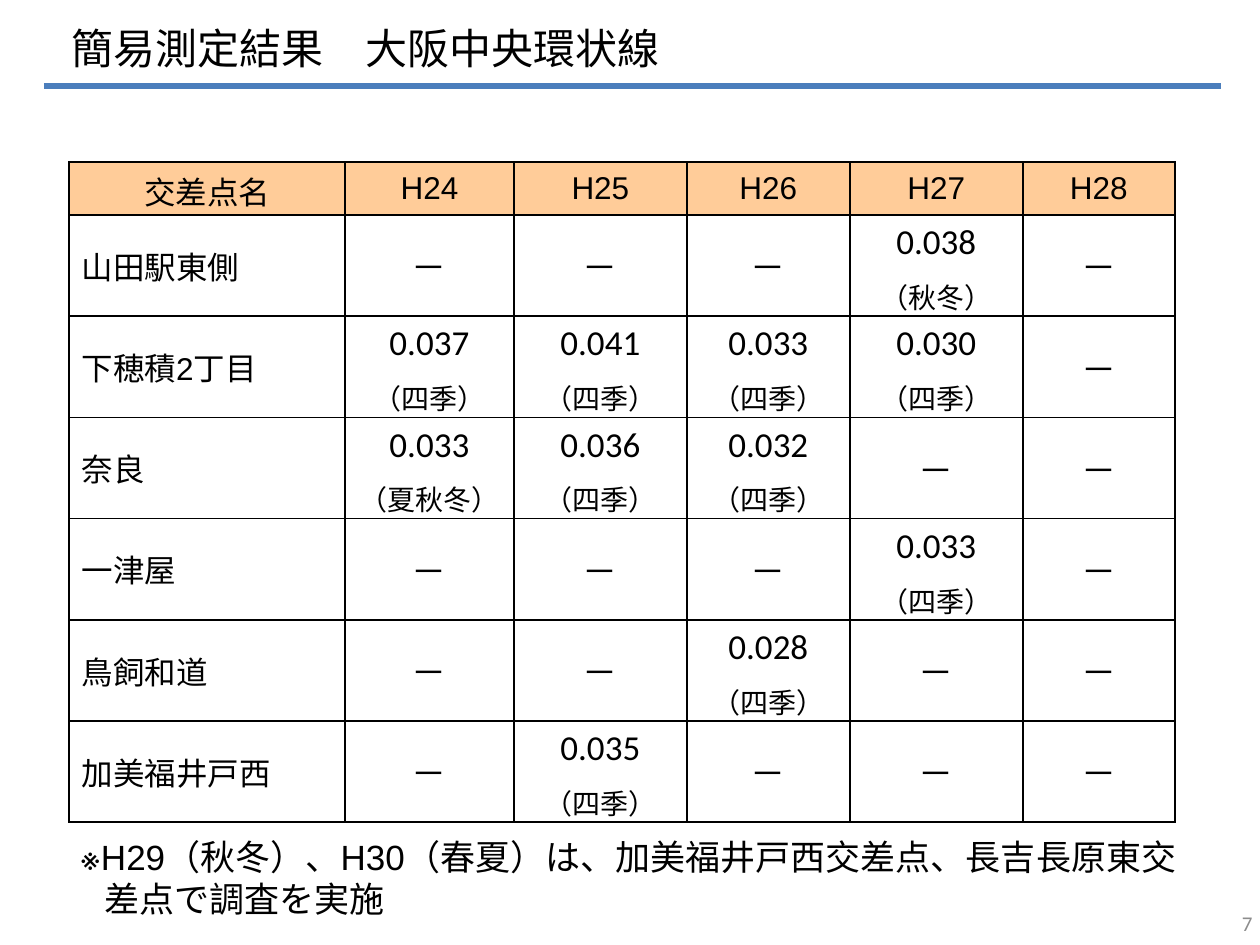
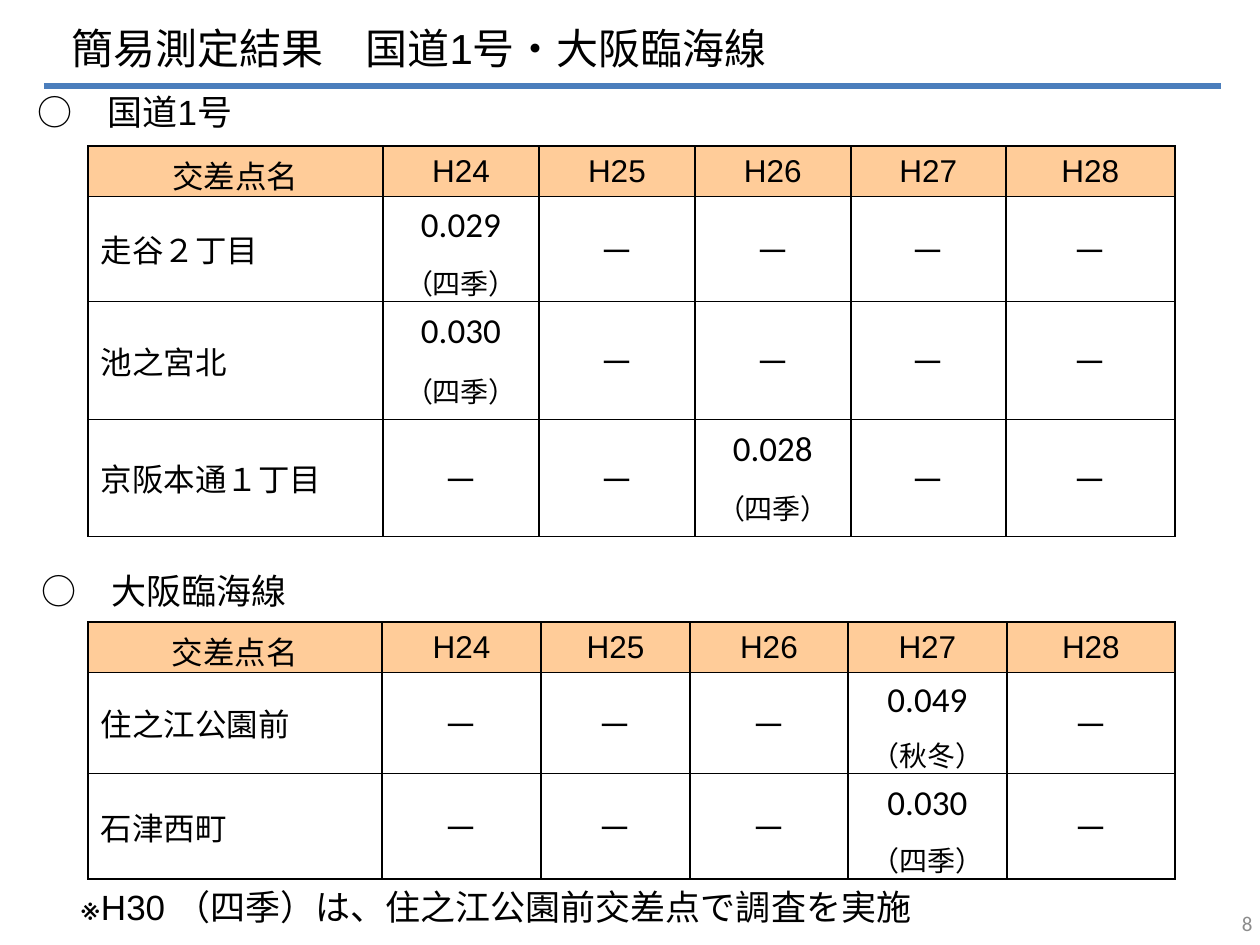
"""Build two slides of simplified measurement results by road."""
import itertools

import pptx
import pptx.dml.color
import pptx.enum.shapes
import pptx.enum.text
import pptx.oxml
import pptx.oxml.ns
import pptx.util

RGB = pptx.dml.color.RGBColor
BLACK = RGB(0x00, 0x00, 0x00)
WHITE = RGB(0xFF, 0xFF, 0xFF)
RULE_BLUE = RGB(0x4B, 0x7E, 0xBC)
HEADER_ORANGE = RGB(0xFF, 0xCC, 0x99)
NUMBER_GREY = RGB(0x8C, 0x8C, 0x8C)

ALIGN = pptx.enum.text.PP_ALIGN
ANCHOR = pptx.enum.text.MSO_ANCHOR
HEADING_FONT, TABLE_FONT = "Arial", "Calibri"
YEARS = ["H24", "H25", "H26", "H27", "H28"]
EMU_PER_INCH, PX_PER_INCH = 914400, 126


def px(length):
    """Turn pixels into EMU."""
    return pptx.util.Emu(round(length * EMU_PER_INCH / PX_PER_INCH))


def style(paragraph, size, font, color=BLACK, align=ALIGN.LEFT):
    """Set alignment and font of a whole paragraph."""
    paragraph.alignment = align
    paragraph.font.size = pptx.util.Pt(size)
    paragraph.font.name = font
    paragraph.font.color.rgb = color


def add_title(slide, text):
    """Place the slide title in its placeholder."""
    title = slide.shapes.title
    title.left, title.top, title.width, title.height = map(px, (59, 16, 1137, 63))
    frame = title.text_frame
    frame.text = text
    frame.vertical_anchor = ANCHOR.TOP
    frame.auto_size = pptx.enum.text.MSO_AUTO_SIZE.NONE
    style(frame.paragraphs[0], 24, HEADING_FONT)


def add_rule(slide):
    """Draw the line under the title."""
    rule = slide.shapes.add_connector(
        pptx.enum.shapes.MSO_CONNECTOR.STRAIGHT, px(44), px(86), px(1221), px(86))
    rule.line.color.rgb = RULE_BLUE
    rule.line.width = pptx.util.Pt(3)
    properties = rule._element.spPr
    properties.append(pptx.oxml.parse_xml(
        f"<a:effectLst {pptx.oxml.ns.nsdecls('a')}/>"))


def add_text(slide, box, text, size=20, font=HEADING_FONT, color=BLACK,
             align=ALIGN.LEFT, anchor=ANCHOR.TOP, hanging=0):
    """Add a one-paragraph text box, optionally with a hanging indent."""
    frame = slide.shapes.add_textbox(*map(px, box)).text_frame
    frame.word_wrap = True
    frame.vertical_anchor = anchor
    paragraph = frame.paragraphs[0]
    paragraph.text = text
    style(paragraph, size, font, color, align)
    if hanging:
        properties = paragraph._p.get_or_add_pPr()
        properties.set("marL", str(px(hanging)))
        properties.set("indent", str(-px(hanging)))


def add_note(slide, top, height, text):
    """Add the remark below the last table."""
    add_text(slide, (68, top, 1126, height), text, hanging=24)


def set_borders(cell, sides):
    """Draw the given sides (of L, R, T, B) and hide the others."""
    properties = cell._tc.get_or_add_tcPr()
    for position, side in enumerate("LRTB"):
        paint = (f'<a:solidFill><a:srgbClr val="{BLACK}"/></a:solidFill>'
                 if side in sides else "<a:noFill/>")
        properties.insert(position, pptx.oxml.parse_xml(
            f'<a:ln{side} {pptx.oxml.ns.nsdecls("a")} w="12700">{paint}</a:ln{side}>'))


def fill_cell(cell, text, size, font=TABLE_FONT, align=ALIGN.CENTER):
    """Write a cell, setting ASCII parts of mixed labels in the heading font."""
    cell.vertical_anchor = ANCHOR.MIDDLE
    paragraph = cell.text_frame.paragraphs[0]
    parts = ["".join(part) for _, part in itertools.groupby(text, str.isascii)]
    for part in parts:
        run = paragraph.add_run()
        run.text = part
        if len(parts) > 1 and part.isascii():
            run.font.name = HEADING_FONT
    style(paragraph, size, font, align=align)


def add_results(slide, left, top, widths, header_height, rows):
    """Add a table with a value row and a season row for each crossing."""
    heights = [header_height] + [h for _, pair, _ in rows for h in pair]
    table = slide.shapes.add_table(
        len(heights), len(widths), px(left), px(top),
        px(sum(widths)), px(sum(heights))).table
    table.first_row = table.horz_banding = False
    for column, width in zip(table.columns, widths):
        column.width = px(width)
    for row, height in zip(table.rows, heights):
        row.height = px(height)

    for column, heading in enumerate(["交差点名"] + YEARS):
        cell = table.cell(0, column)
        cell.fill.solid()
        cell.fill.fore_color.rgb = HEADER_ORANGE
        set_borders(cell, "LRTB")
        fill_cell(cell, heading, 18, HEADING_FONT if column else TABLE_FONT)

    for index, (crossing, _, results) in enumerate(rows):
        for column, year in enumerate([None] + YEARS):
            upper = table.cell(2 * index + 1, column)
            lower = table.cell(2 * index + 2, column)
            measured = year in results
            set_borders(upper, "LRT" if measured else "LRTB")
            set_borders(lower, "LRB")
            upper.fill.background()
            lower.fill.background()
            if measured:
                value, season = results[year]
                fill_cell(upper, value, 20)
                fill_cell(lower, f"（{season}）", 16)
                continue
            upper.merge(lower)
            if year:
                fill_cell(upper, "－", 20)
            else:
                fill_cell(upper, crossing, 18, align=ALIGN.LEFT)


def add_slide(deck, title, number):
    """Add a slide with title, rule and page number."""
    slide = deck.slides.add_slide(deck.slide_layouts[5])
    slide.background.fill.solid()
    slide.background.fill.fore_color.rgb = WHITE
    add_rule(slide)
    add_text(slide, (1194, 898, 71, 50), number, 12, TABLE_FONT, NUMBER_GREY,
             ALIGN.RIGHT, ANCHOR.MIDDLE)
    add_title(slide, title)
    return slide


def build_chuo_kanjo(deck):
    """Build the slide on the central ring road."""
    slide = add_slide(deck, "簡易測定結果　大阪中央環状線", "7")
    pair = (55, 46)
    add_results(slide, 69, 162, [276, 169, 173, 163, 173, 152], 53, [
        ("山田駅東側", pair, {"H27": ("0.038", "秋冬")}),
        ("下穂積2丁目", pair, {"H24": ("0.037", "四季"), "H25": ("0.041", "四季"),
                          "H26": ("0.033", "四季"), "H27": ("0.030", "四季")}),
        ("奈良", pair, {"H24": ("0.033", "夏秋冬"), "H25": ("0.036", "四季"),
                      "H26": ("0.032", "四季")}),
        ("一津屋", pair, {"H27": ("0.033", "四季")}),
        ("鳥飼和道", pair, {"H26": ("0.028", "四季")}),
        ("加美福井戸西", pair, {"H25": ("0.035", "四季")}),
    ])
    add_note(slide, 829, 97, "※H29（秋冬）、H30（春夏）は、加美福井戸西交差点、"
                             "長吉長原東交差点で調査を実施")


def build_route1_rinkai(deck):
    """Build the slide on Route 1 and the bay road."""
    slide = add_slide(deck, "簡易測定結果　国道1号・大阪臨海線", "8")
    add_text(slide, (25, 84, 265, 55), "○　国道1号")
    add_results(slide, 88, 146, [295, 156, 156, 156, 155, 169], 50, [
        ("走谷２丁目", (59, 46), {"H24": ("0.029", "四季")}),
        ("池之宮北", (59, 59), {"H24": ("0.030", "四季")}),
        ("京阪本通１丁目", (59, 58), {"H26": ("0.028", "四季")}),
    ])
    add_text(slide, (29, 563, 552, 55), "○　大阪臨海線")
    add_results(slide, 88, 622, [294, 159, 149, 158, 159, 168], 50, [
        ("住之江公園前", (55, 46), {"H27": ("0.049", "秋冬")}),
        ("石津西町", (59, 46), {"H27": ("0.030", "四季")}),
    ])
    add_note(slide, 879, 55, "※H30 （四季）は、住之江公園前交差点で調査を実施")


def main():
    """Build and save the deck."""
    deck = pptx.Presentation()
    deck.slide_width, deck.slide_height = px(1260), px(945)
    build_chuo_kanjo(deck)
    build_route1_rinkai(deck)
    deck.save("out.pptx")


if __name__ == "__main__":
    main()
